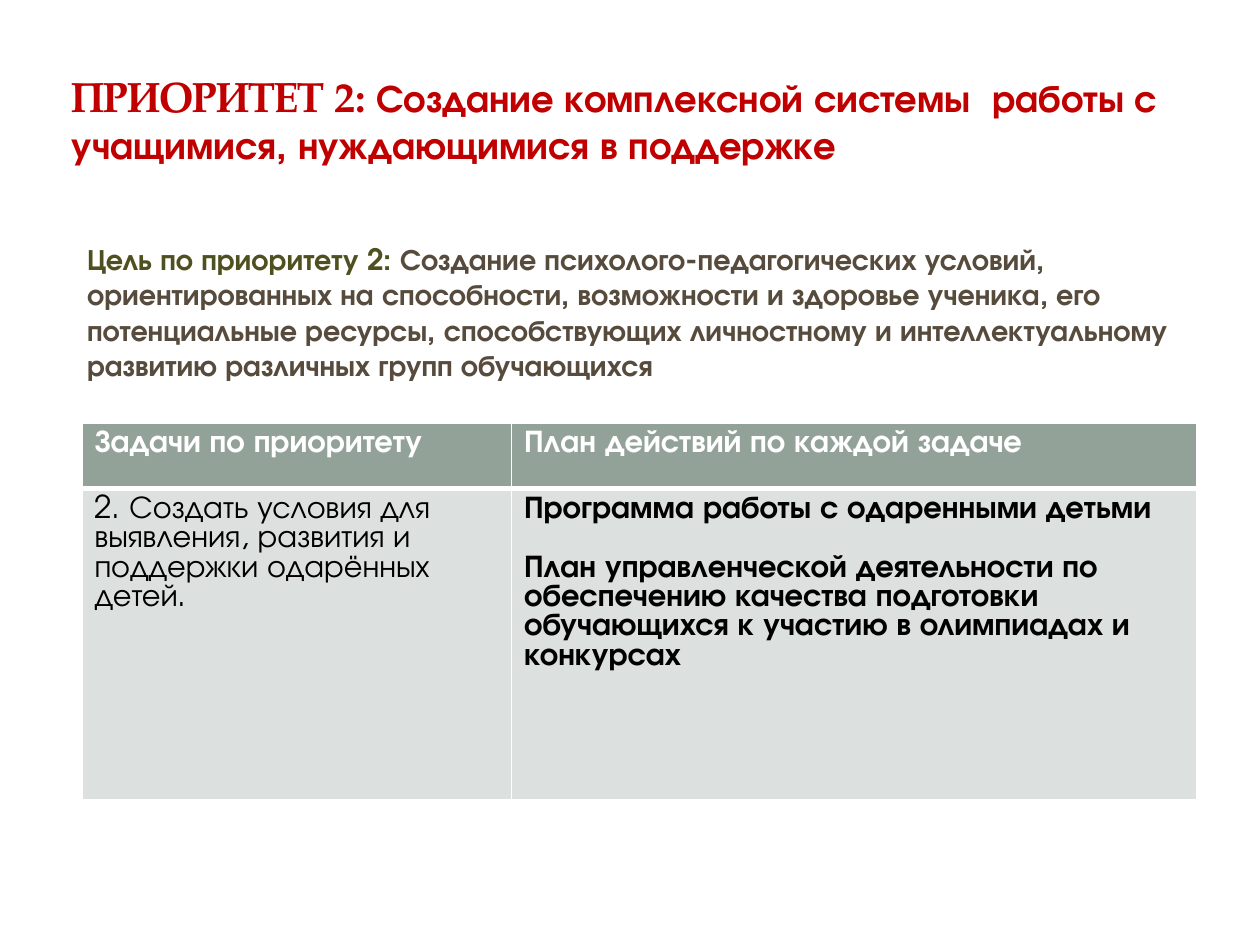
import dataclasses

import lxml.etree
import pptx
import pptx.dml.color
import pptx.enum.shapes
import pptx.enum.text
import pptx.oxml.ns
import pptx.util

Pt = pptx.util.Pt
qn = pptx.oxml.ns.qn
SHAPES = pptx.enum.shapes.MSO_SHAPE


@dataclasses.dataclass(frozen=True)
class Theme:
    sans: str = "TeX Gyre Adventor"
    serif: str = "TeX Gyre Pagella"
    title: str = "C00000"
    goal_label: str = "4E501F"
    goal: str = "564B3C"
    header_fill: str = "93A299"
    body_fill: str = "DCE0DE"
    light: str = "FFFFFF"
    dark: str = "000000"
    title_label_size: float = 24
    title_size: float = 22
    goal_size: float = 16.8
    table_size: float = 18


THEME = Theme()


def set_fill(fill, color):
    fill.solid()
    fill.fore_color.rgb = pptx.dml.color.RGBColor.from_string(color)


def add_run(paragraph, text, color, **formats):
    run = paragraph.add_run()
    run.text = text
    for name, value in formats.items():
        setattr(run.font, name, value)
    run.font.color.rgb = pptx.dml.color.RGBColor.from_string(color)


def set_frame(frame, anchor):
    formats = {
        "word_wrap": True,
        "auto_size": pptx.enum.text.MSO_AUTO_SIZE.NONE,
        "vertical_anchor": anchor,
    }
    for name, value in formats.items():
        setattr(frame, name, value)


def add_panel(slide, kind, box, opacity=100):
    panel = slide.shapes.add_shape(kind, *map(Pt, box))
    panel.shadow.inherit = False
    panel.line.fill.background()
    set_fill(panel.fill, THEME.light)
    if kind == SHAPES.ROUNDED_RECTANGLE:
        panel.adjustments[0] = 0.02
    if opacity < 100:
        color = panel.fill._xPr.find(qn("a:solidFill"))[0]
        lxml.etree.SubElement(color, qn("a:alpha"), val=str(opacity * 1000))


def place_backdrop(slide):
    """Lay the page card and the two title panels behind the title."""
    add_panel(slide, SHAPES.ROUNDED_RECTANGLE, (7.2, 7.9, 705.6, 524.9))
    add_panel(slide, SHAPES.RECTANGLE, (21.6, 21.6, 676.8, 104.4), opacity=83)
    add_panel(slide, SHAPES.RECTANGLE, (29.5, 29.5, 660.2, 87.8))
    slide.shapes._spTree.append(slide.shapes.title._element)


def place_title(slide, box, label, text):
    title = slide.shapes.title
    for name, value in zip(("left", "top", "width", "height"), box):
        setattr(title, name, Pt(value))
    set_frame(title.text_frame, pptx.enum.text.MSO_ANCHOR.MIDDLE)
    paragraph = title.text_frame.paragraphs[0]
    paragraph.alignment = pptx.enum.text.PP_ALIGN.LEFT
    add_run(paragraph, label, THEME.title, name=THEME.serif,
            size=Pt(THEME.title_label_size), bold=True)
    add_run(paragraph, text, THEME.title, name=THEME.sans,
            size=Pt(THEME.title_size), bold=True)


def place_goal(slide, box, label, text):
    frame = slide.shapes.add_textbox(*map(Pt, box)).text_frame
    set_frame(frame, pptx.enum.text.MSO_ANCHOR.TOP)
    frame.margin_left = Pt(16)
    paragraph = frame.paragraphs[0]
    for part, color in ((label, THEME.goal_label), (text, THEME.goal)):
        add_run(paragraph, part, color, name=THEME.sans,
                size=Pt(THEME.goal_size), bold=True)


def set_borders(cell, widths):
    """Draw light borders; widths maps a side (L, R, T, B) to points."""
    properties = cell._tc.get_or_add_tcPr()
    for index, (side, width) in enumerate(widths.items()):
        line = lxml.etree.Element(qn(f"a:ln{side}"), w=str(Pt(width)))
        fill = lxml.etree.SubElement(line, qn("a:solidFill"))
        lxml.etree.SubElement(fill, qn("a:srgbClr"), val=THEME.light)
        properties.insert(index, line)


def fill_cell(cell, paragraphs, fill, color, bold, top=1, bottom=1):
    set_fill(cell.fill, fill)
    set_borders(cell, {"L": 1, "R": 1, "T": top, "B": bottom})
    frame = cell.text_frame
    for index, text in enumerate(paragraphs):
        paragraph = frame.add_paragraph() if index else frame.paragraphs[0]
        if index:
            paragraph.space_before = Pt(17)
        add_run(paragraph, text, color, name=THEME.sans,
                size=Pt(THEME.table_size), bold=bold)


def place_plan_table(slide, box, column_widths, row_heights, header, tasks, plans):
    table = slide.shapes.add_table(2, 2, *map(Pt, box)).table
    for column, width in zip(table.columns, column_widths):
        column.width = Pt(width)
    for row, height in zip(table.rows, row_heights):
        row.height = Pt(height)
    for index, text in enumerate(header):
        fill_cell(table.cell(0, index), [text], THEME.header_fill, THEME.light, True, bottom=3)
    for index, (paragraphs, bold) in enumerate(((tasks, False), (plans, True))):
        fill_cell(table.cell(1, index), paragraphs, THEME.body_fill, THEME.dark, bold, top=3)


def main():
    presentation = pptx.Presentation()
    presentation.slide_width, presentation.slide_height = Pt(720), Pt(540)
    slide = presentation.slides.add_slide(presentation.slide_layouts.get_by_name("Title Only"))
    place_backdrop(slide)
    place_title(
        slide, (33.8, 26, 650.2, 83.5), "ПРИОРИТЕТ 2: ",
        "Создание комплексной системы  работы с учащимися, нуждающимися в поддержке")
    place_plan_table(
        slide, (46.8, 241.9, 637.2, 215.3), (245.5, 391.7), (37.4, 177.9),
        ("Задачи по приоритету", "План действий по каждой задаче"),
        ["2. Создать условия для выявления, развития и поддержки одарённых детей."],
        ["Программа работы с одаренными детьми",
         "План управленческой деятельности по обеспечению качества подготовки "
         "обучающихся к участию в олимпиадах и конкурсах"])
    place_goal(
        slide, (33.8, 134.3, 648, 82.8), "Цель по приоритету 2: ",
        "Создание психолого-педагогических условий, ориентированных на способности, "
        "возможности и здоровье ученика, его потенциальные ресурсы, способствующих "
        "личностному и интеллектуальному развитию различных групп обучающихся")
    presentation.save("out.pptx")


if __name__ == "__main__":
    main()
